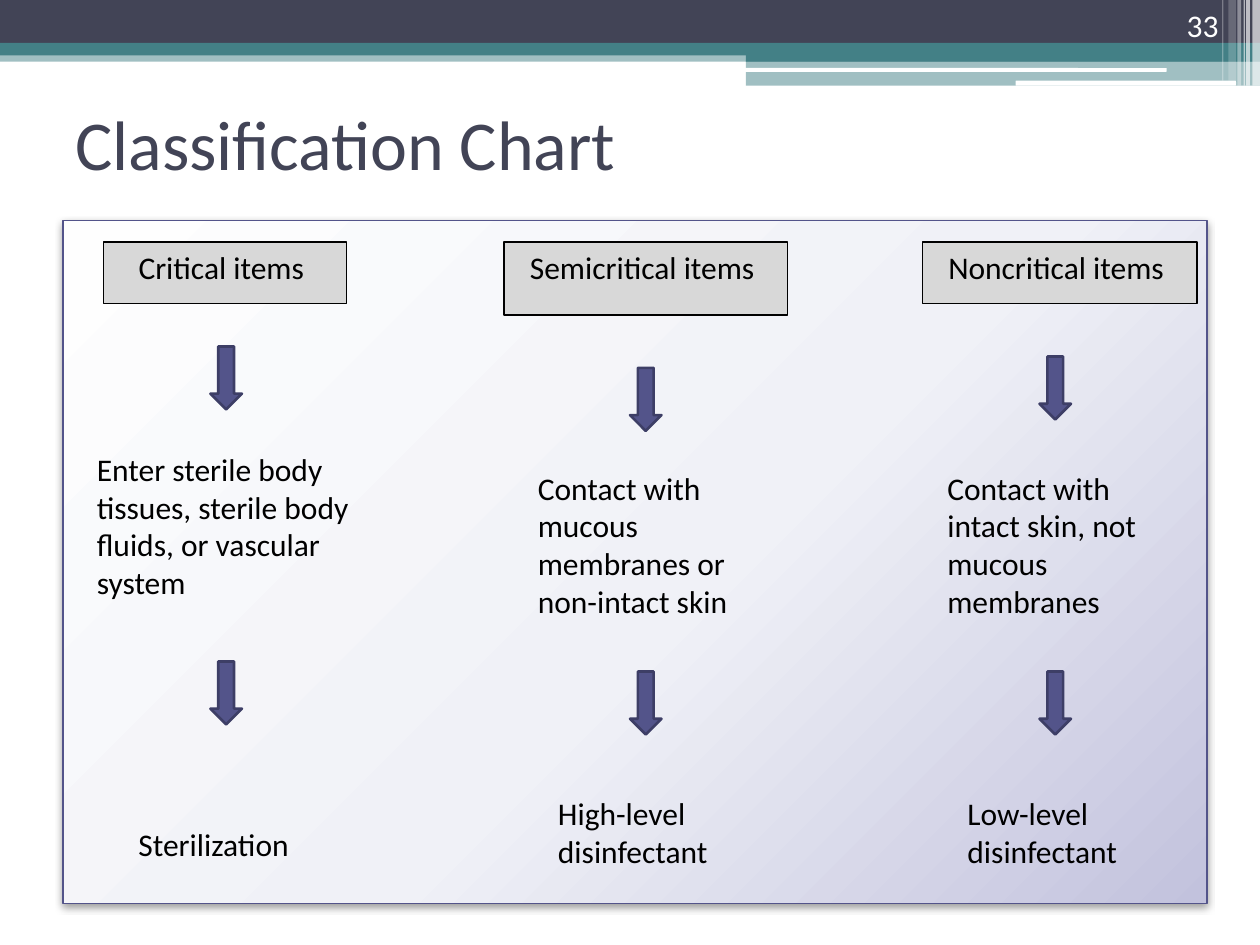
import pptx
import pptx.dml.color
import pptx.enum.shapes
import pptx.enum.text
import pptx.oxml
import pptx.oxml.ns
import pptx.util

RGBColor = pptx.dml.color.RGBColor
Shape = pptx.enum.shapes.MSO_SHAPE
Align = pptx.enum.text.PP_ALIGN
Anchor = pptx.enum.text.MSO_ANCHOR

SLATE = RGBColor(0x42, 0x44, 0x56)
TEAL = RGBColor(0x43, 0x80, 0x86)
INDIGO = RGBColor(0x53, 0x54, 0x8A)
DARK_INDIGO = RGBColor(0x3D, 0x3E, 0x66)
GRAY = RGBColor(0xD8, 0xD8, 0xD8)
BLACK = RGBColor(0, 0, 0)
WHITE = RGBColor(0xFF, 0xFF, 0xFF)
PANEL_STOPS = (
    (0, RGBColor(0xFE, 0xFE, 0xFE)),
    (55, RGBColor(0xF0, 0xF1, 0xF7)),
    (100, RGBColor(0xC2, 0xC2, 0xDD)),
)

FONT = "Calibri"
CELL = pptx.util.Inches(0.01)
COLUMNS, ROWS = 1000, 750
HEADER_TOP = 192
ARROW_WIDTH, ARROW_HEIGHT = 25, 50

BANNER = (
    (Shape.RECTANGLE, (0, 40, COLUMNS, 9), TEAL, 50),
    (Shape.RECTANGLE, (0, 0, COLUMNS, 34), SLATE, 100),
    (Shape.RECTANGLE, (0, 34, COLUMNS, 10), TEAL, 100),
    (Shape.RECTANGLE, (592, 39, 408, 10), TEAL, 100),
    (Shape.RECTANGLE, (592, 48, 408, 20), TEAL, 50),
    (Shape.ROUNDED_RECTANGLE, (591, 54, 335, 3), WHITE, 100),
    (Shape.ROUNDED_RECTANGLE, (806, 64, 175, 4), WHITE, 100),
)
STRIPES = (
    (994, 6, 68, 65),
    (989, 3, 68, 65),
    (987, 1, 68, 60),
    (982, 3, 68, 40),
    (975, 6, 64, 20),
    (970, 1, 64, 30),
)
CATEGORIES = (
    {
        "header": ("Critical items ", 82, 193, 49),
        "arrows": (167, 275, 525),
        "contact": ("Enter sterile body tissues, sterile body fluids, or vascular system", 67, 352, 225, 131),
        "treatment": ("Sterilization", 100, 650, 158, 40),
    },
    {
        "header": ("Semicritical items ", 400, 225, 58),
        "arrows": (500, 292, 533),
        "contact": ("Contact with mucous membranes or non-intact skin", 417, 367, 192, 131),
        "treatment": ("High-level disinfectant", 433, 625, 158, 71),
    },
    {
        "header": ("Noncritical items ", 732, 218, 49),
        "arrows": (825, 283, 533),
        "contact": ("Contact with intact skin, not mucous membranes", 742, 367, 192, 131),
        "treatment": ("Low-level disinfectant", 758, 625, 158, 71),
    },
)


def grid(*cells):
    """Turn grid cells into lengths."""
    return [round(count * CELL) for count in cells]


def write(box, text, size=18, color=BLACK, align=Align.LEFT, anchor=Anchor.TOP):
    """Put one formatted paragraph in a box and return it."""
    frame = box.text_frame
    frame.word_wrap = True
    frame.vertical_anchor = anchor
    frame.text = text
    para = frame.paragraphs[0]
    para.alignment = align
    span = para.runs[0]
    span.font.name = FONT
    span.font.size = pptx.util.Pt(size)
    span.font.color.rgb = color
    return para


def add_text(page, text, area, **style):
    """Add a text box on the grid."""
    write(page.shapes.add_textbox(*grid(*area)), text, **style)


def add_block(page, kind, area, fill, line=None, weight=0.75, opacity=100):
    """Add a flat preset shape on the grid."""
    block = page.shapes.add_shape(kind, *grid(*area))
    block.shadow.inherit = False
    block.fill.solid()
    block.fill.fore_color.rgb = fill
    if line is None:
        block.line.fill.background()
    else:
        block.line.color.rgb = line
        block.line.width = pptx.util.Pt(weight)
    if opacity < 100:
        color = block.fill._xPr.find(".//" + pptx.oxml.ns.qn("a:srgbClr"))
        color.append(pptx.oxml.parse_xml(
            f'<a:alpha {pptx.oxml.ns.nsdecls("a")} val="{opacity * 1000}"/>'))
    return block


def add_banner(page):
    """Draw the bands and stripes along the top."""
    for kind, area, color, opacity in BANNER:
        add_block(page, kind, area, color, opacity=opacity)
    for left, width, height, opacity in STRIPES:
        add_block(page, Shape.RECTANGLE, (left, 0, width, height), WHITE, opacity=opacity)


def add_panel(page):
    """Draw the chart panel with its radial gradient and soft shadow."""
    panel = add_block(page, Shape.RECTANGLE, (50, 175, 908, 542), WHITE, INDIGO)
    namespace = pptx.oxml.ns.nsdecls("a")
    stops = "".join(
        f'<a:gs pos="{share * 1000}"><a:srgbClr val="{color}"/></a:gs>'
        for share, color in PANEL_STOPS)
    gradient = pptx.oxml.parse_xml(
        f'<a:gradFill {namespace} rotWithShape="1"><a:gsLst>{stops}</a:gsLst>'
        '<a:path path="circle"><a:fillToRect l="-40000" t="-90000" r="140000" b="190000"/>'
        '</a:path></a:gradFill>')
    shadow = pptx.oxml.parse_xml(
        f'<a:outerShdw {namespace} blurRad="{pptx.util.Pt(4.1)}" dist="{pptx.util.Pt(2)}" '
        'dir="5400000" rotWithShape="0"><a:srgbClr val="000000"><a:alpha val="40000"/>'
        '</a:srgbClr></a:outerShdw>')
    properties = panel._element.spPr
    solid = properties.find(pptx.oxml.ns.qn("a:solidFill"))
    properties.replace(solid, gradient)
    properties.find(pptx.oxml.ns.qn("a:effectLst")).append(shadow)


def add_category(page, header, arrows, contact, treatment):
    """Draw one column from item class down to treatment."""
    text, left, width, height = header
    box = add_block(page, Shape.RECTANGLE, (left, HEADER_TOP, width, height), GRAY, BLACK)
    para = write(box, text, align=Align.CENTER)
    para.space_before = pptx.util.Pt(8)
    para.space_after = pptx.util.Pt(10)
    arrow_left, *tops = arrows
    for top in tops:
        add_block(page, Shape.DOWN_ARROW, (arrow_left, top, ARROW_WIDTH, ARROW_HEIGHT),
                  INDIGO, DARK_INDIGO, 1.5)
    for text, *area in (contact, treatment):
        add_text(page, text, area)


def main():
    """Build and save the slide."""
    deck = pptx.Presentation()
    deck.slide_width, deck.slide_height = grid(COLUMNS, ROWS)
    page = deck.slides.add_slide(deck.slide_layouts[6])
    add_banner(page)
    add_text(page, "Classification Chart", (50, 67, 900, 92),
             size=40, color=SLATE, anchor=Anchor.MIDDLE)
    add_text(page, "33", (894, 0, 83, 40),
             color=WHITE, align=Align.RIGHT, anchor=Anchor.BOTTOM)
    add_panel(page)
    for category in CATEGORIES:
        add_category(page, **category)
    deck.save("out.pptx")


if __name__ == "__main__":
    main()
